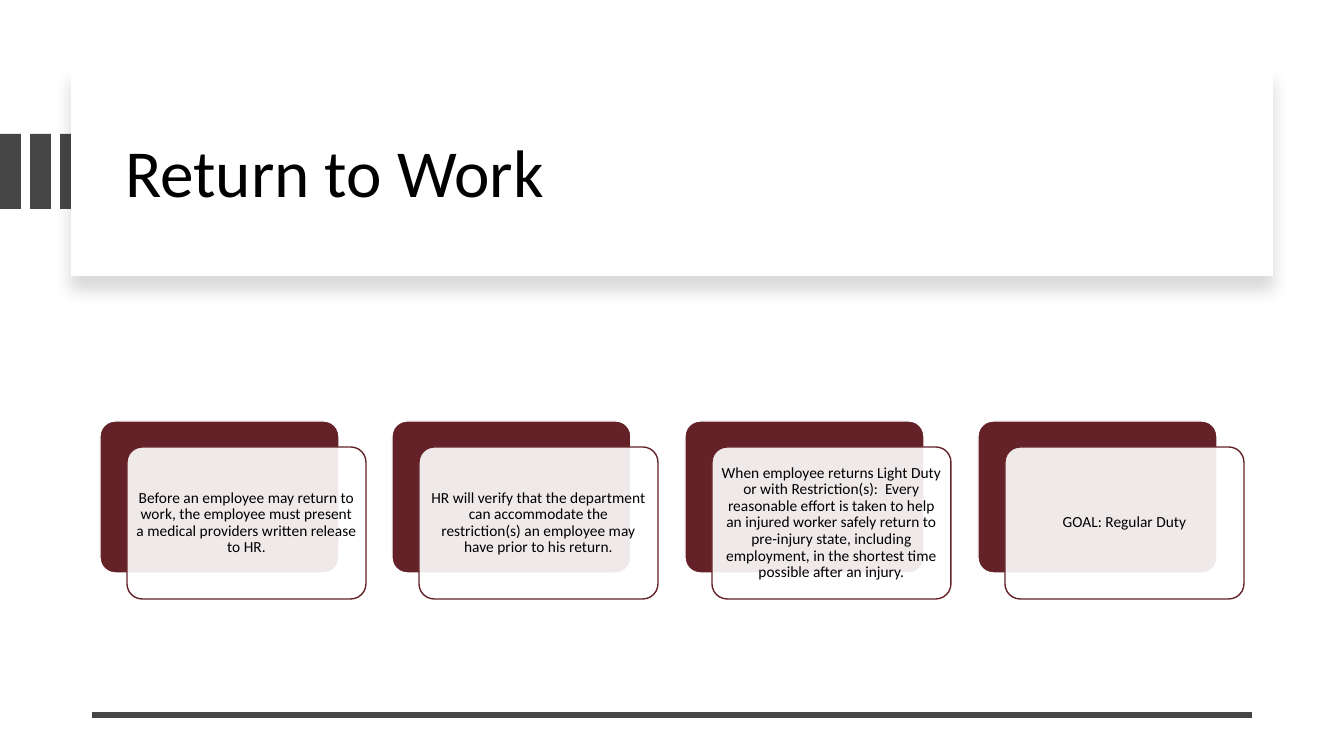
import pptx
import pptx.dml.color
import pptx.enum.shapes
import pptx.enum.text
import pptx.oxml
import pptx.oxml.ns
import pptx.util

PX = 9071  # EMU in one px
SHAPE = pptx.enum.shapes.MSO_SHAPE
ALIGN = pptx.enum.text.PP_ALIGN
rgb = pptx.dml.color.RGBColor.from_string

THEME = {
    "font": "Calibri",
    "title_size": 48,
    "step_size": 11,
    "ink": rgb("000000"),
    "paper": rgb("FFFFFF"),
    "gray": rgb("464646"),
    "maroon": rgb("642228"),
}
STEPS = [
    "Before an employee may return to work, the employee must present a medical "
    "providers written release to HR.",
    "HR will verify that the department can accommodate the restriction(s) an "
    "employee may have prior to his return.",
    "When employee returns Light Duty or with Restriction(s):  Every reasonable "
    "effort is taken to help an injured worker safely return to pre-injury state, "
    "including employment, in the shortest time possible after an injury.",
    "GOAL: Regular Duty",
]


def add_block(kind, left, top, width, height, fill, line=None):
    block = slide.shapes.add_shape(kind, left * PX, top * PX, width * PX, height * PX)
    block.shadow.inherit = False
    block.fill.solid()
    block.fill.fore_color.rgb = fill
    if line is None:
        block.line.fill.background()
    else:
        block.line.color.rgb = line
        block.line.width = pptx.util.Pt(1)
    if kind == SHAPE.ROUNDED_RECTANGLE:
        block.adjustments[0] = 0.1
    return block


def write(frame, text, size, align, inset):
    """Fill a text frame with one vertically centred paragraph; inset is in px."""
    frame.word_wrap = True
    frame.auto_size = pptx.enum.text.MSO_AUTO_SIZE.NONE
    frame.vertical_anchor = pptx.enum.text.MSO_ANCHOR.MIDDLE
    frame.margin_left = frame.margin_right = inset * PX
    frame.margin_top = frame.margin_bottom = 5 * PX
    paragraph = frame.paragraphs[0]
    paragraph.alignment = align
    paragraph.line_spacing = 0.9
    run = paragraph.add_run()
    run.text = text
    run.font.name = THEME["font"]
    run.font.size = pptx.util.Pt(size)
    run.font.color.rgb = THEME["ink"]


deck = pptx.Presentation()
deck.slide_width = 1344 * PX
deck.slide_height = 756 * PX
slide = deck.slides.add_slide(deck.slide_layouts[5])

# Header: stripes, then the shadowed panel, then the title in front
for stripe in range(3):
    add_block(SHAPE.RECTANGLE, stripe * 30, 134, 21, 75, THEME["gray"])

panel = add_block(SHAPE.RECTANGLE, 71, 68, 1202, 208, THEME["paper"])
effects = panel.element.spPr.find(pptx.oxml.ns.qn("a:effectLst"))
effects.append(pptx.oxml.parse_xml(
    f'<a:outerShdw {pptx.oxml.ns.nsdecls("a")} blurRad="139700" dist="127000" '
    'dir="5400000" algn="t" rotWithShape="0">'
    '<a:srgbClr val="000000"><a:alpha val="15000"/></a:srgbClr></a:outerShdw>'
))

title = slide.shapes.title
title.left, title.top, title.width, title.height = 115 * PX, 90 * PX, 1122 * PX, 171 * PX
write(title.text_frame, "Return to Work", THEME["title_size"], ALIGN.LEFT, inset=10)
title.element.getparent().append(title.element)

footer_rule = slide.shapes.add_connector(
    pptx.enum.shapes.MSO_CONNECTOR.STRAIGHT, 1252 * PX, 715 * PX, 92 * PX, 715 * PX)
footer_rule.line.color.rgb = THEME["gray"]
footer_rule.line.width = pptx.util.Pt(4.5)
footer_rule.element.spPr.append(
    pptx.oxml.parse_xml(f'<a:effectLst {pptx.oxml.ns.nsdecls("a")}/>'))

# Steps: a maroon backing with a translucent card set off from it
for index, step in enumerate(STEPS):
    left = 100 + index * 878 // 3
    add_block(SHAPE.ROUNDED_RECTANGLE, left, 421, 239, 152,
              THEME["maroon"], line=THEME["paper"])
    card = add_block(SHAPE.ROUNDED_RECTANGLE, left + 27, 447, 239, 152,
                     THEME["paper"], line=THEME["maroon"])
    card_color = card.element.spPr.find(pptx.oxml.ns.qn("a:solidFill"))[0]
    card_color.append(pptx.oxml.parse_xml(
        f'<a:alpha {pptx.oxml.ns.nsdecls("a")} val="90000"/>'))
    write(card.text_frame, step, THEME["step_size"], ALIGN.CENTER, inset=5)

deck.save("out.pptx")
